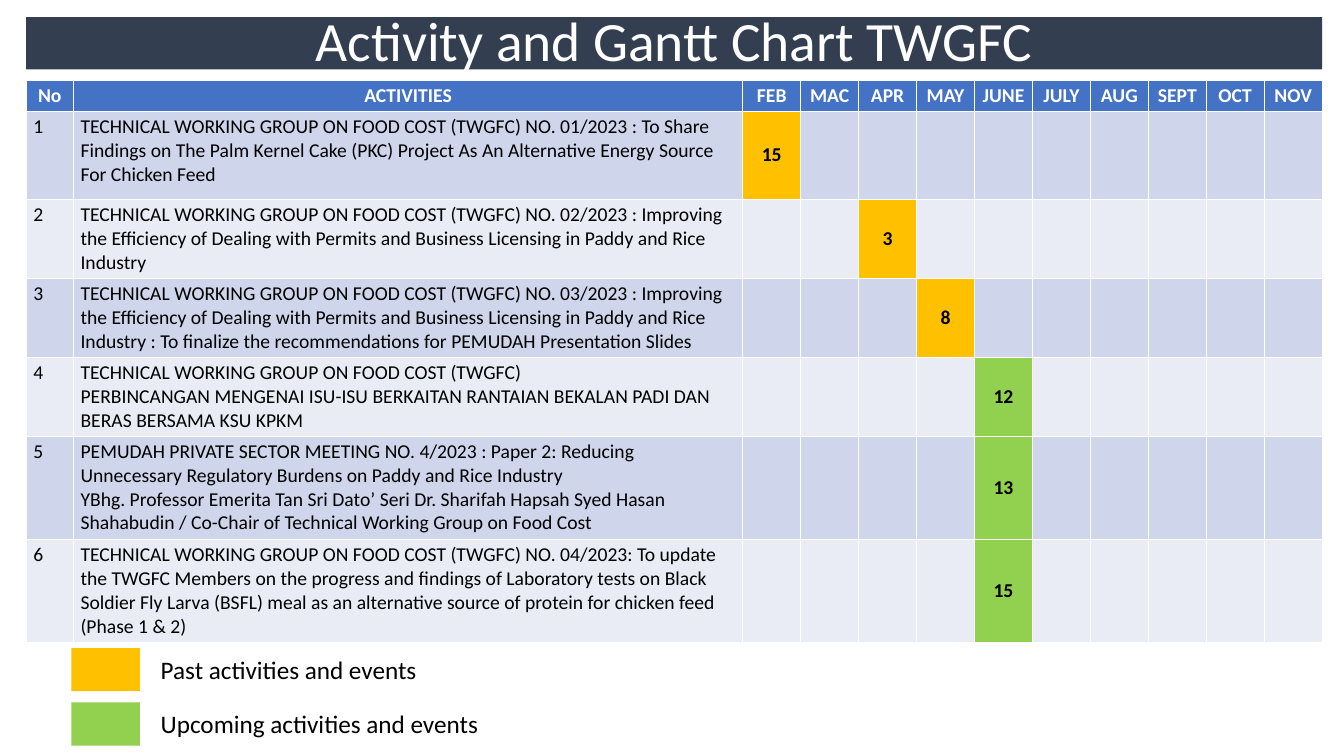
from pptx import Presentation
from pptx.dml.color import RGBColor
from pptx.enum import shapes, text
from pptx.util import Cm, Pt

COLOURS = {
    "title": "333F50",
    "header": "4472C4",
    "odd": "CFD5EA",
    "even": "E9EBF5",
    "past": "FFC000",
    "upcoming": "92D050",
    "white": "FFFFFF",
    "black": "000000",
}
MONTHS = ["FEB", "MAC", "APR", "MAY", "JUNE", "JULY", "AUG", "SEPT", "OCT", "NOV"]
GROUP = "TECHNICAL WORKING GROUP ON FOOD COST (TWGFC)"
PERMITS = ("Improving the Efficiency of Dealing with Permits and Business "
           "Licensing in Paddy and Rice Industry")
# activity, month, day, status, row height in cm
ACTIVITIES = [
    (GROUP + " NO. 01/2023 : To Share Findings on The Palm Kernel Cake (PKC) Project "
     "As An Alternative Energy Source For Chicken Feed", "FEB", 15, "past", 2.22),
    (GROUP + " NO. 02/2023 : " + PERMITS, "APR", 3, "past", 1.99),
    (GROUP + " NO. 03/2023 : " + PERMITS + " : To finalize the recommendations for "
     "PEMUDAH Presentation Slides", "MAY", 8, "past", 1.99),
    (GROUP + "\nPERBINCANGAN MENGENAI ISU-ISU BERKAITAN RANTAIAN BEKALAN PADI DAN "
     "BERAS BERSAMA KSU KPKM", "JUNE", 12, "upcoming", 1.99),
    ("PEMUDAH PRIVATE SECTOR MEETING NO. 4/2023 : Paper 2: Reducing Unnecessary "
     "Regulatory Burdens on Paddy and Rice Industry\n"
     "YBhg. Professor Emerita Tan Sri Dato’ Seri Dr. Sharifah Hapsah Syed Hasan "
     "Shahabudin / Co-Chair of Technical Working Group on Food Cost",
     "JUNE", 13, "upcoming", 2.6),
    (GROUP + " NO. 04/2023: To update the TWGFC Members on the progress and findings "
     "of Laboratory tests on Black Soldier Fly Larva (BSFL) meal as an alternative "
     "source of protein for chicken feed (Phase 1 & 2)", "JUNE", 15, "upcoming", 2.6),
]
LEFT, WIDTH = 0.66, 32.66
HEADER_HEIGHT, NUMBER_WIDTH, MONTH_WIDTH = 0.77, 1.19, 1.46


def paint(target, colour):
    target.fill.solid()
    target.fill.fore_color.rgb = RGBColor.from_string(COLOURS[colour])


def format_text(frame, size, colour="black", bold=False, align=text.PP_ALIGN.LEFT):
    for paragraph in frame.paragraphs:
        paragraph.alignment = align
        for run in paragraph.runs:
            run.font.name = "Calibri"
            run.font.size = Pt(size)
            run.font.bold = bold
            run.font.color.rgb = RGBColor.from_string(COLOURS[colour])


def add_title(slide, wording):
    title = slide.shapes.title
    title.left, title.top, title.width, title.height = Cm(LEFT), Cm(0.43), Cm(WIDTH), Cm(1.32)
    paint(title, "title")
    frame = title.text_frame
    frame.text = wording
    frame.auto_size = text.MSO_AUTO_SIZE.NONE
    frame.vertical_anchor = text.MSO_ANCHOR.MIDDLE
    frame.paragraphs[0].line_spacing = 0.9
    format_text(frame, 39.6, "white", align=text.PP_ALIGN.CENTER)


def fill_cell(cell, wording, fill, **style):
    paint(cell, fill)
    cell.margin_left = cell.margin_right = Cm(0.18)
    cell.margin_top = cell.margin_bottom = Cm(0.09)
    cell.text_frame.text = wording
    format_text(cell.text_frame, 14, **style)


def add_gantt(slide):
    heights = [HEADER_HEIGHT] + [activity[-1] for activity in ACTIVITIES]
    headings = ["No", "ACTIVITIES"] + MONTHS
    gantt = slide.shapes.add_table(len(heights), len(headings), Cm(LEFT), Cm(2.02),
                                   Cm(WIDTH), Cm(sum(heights))).table
    activity_width = WIDTH - NUMBER_WIDTH - MONTH_WIDTH * len(MONTHS)
    widths = [NUMBER_WIDTH, activity_width] + [MONTH_WIDTH] * len(MONTHS)
    for column, width in zip(gantt.columns, widths):
        column.width = Cm(width)
    for row, height in zip(gantt.rows, heights):
        row.height = Cm(height)

    for column, heading in enumerate(headings):
        fill_cell(gantt.cell(0, column), heading, "header", colour="white", bold=True,
                  align=text.PP_ALIGN.CENTER)
    for number, (activity, month, day, status, _) in enumerate(ACTIVITIES, 1):
        band = "odd" if number % 2 else "even"
        fill_cell(gantt.cell(number, 0), str(number), band)
        fill_cell(gantt.cell(number, 1), activity, band)
        for column, heading in enumerate(MONTHS, 2):
            cell = gantt.cell(number, column)
            if heading == month:
                fill_cell(cell, str(day), status, bold=True, align=text.PP_ALIGN.CENTER)
                cell.vertical_anchor = text.MSO_ANCHOR.MIDDLE
            else:
                paint(cell, band)


def add_legend_entry(slide, top, status, wording, width):
    swatch = slide.shapes.add_shape(shapes.MSO_SHAPE.RECTANGLE,
                                    Cm(1.8), Cm(top), Cm(1.73), Cm(1.09))
    swatch.shadow.inherit = False
    paint(swatch, status)
    swatch.line.fill.background()
    label = slide.shapes.add_textbox(Cm(3.8), Cm(top + 0.03), Cm(width), Cm(1.02)).text_frame
    label.word_wrap = False
    label.text = wording
    format_text(label, 18)


def main():
    prs = Presentation()
    prs.slide_width, prs.slide_height = Cm(33.87), Cm(19.05)
    slide = prs.slides.add_slide(prs.slide_layouts[5])
    add_title(slide, "Activity and Gantt Chart TWGFC")
    add_gantt(slide)
    add_legend_entry(slide, 16.33, "past", "Past activities and events", 7.19)
    add_legend_entry(slide, 17.7, "upcoming", "Upcoming activities and events", 8.61)
    prs.save("out.pptx")


if __name__ == "__main__":
    main()
